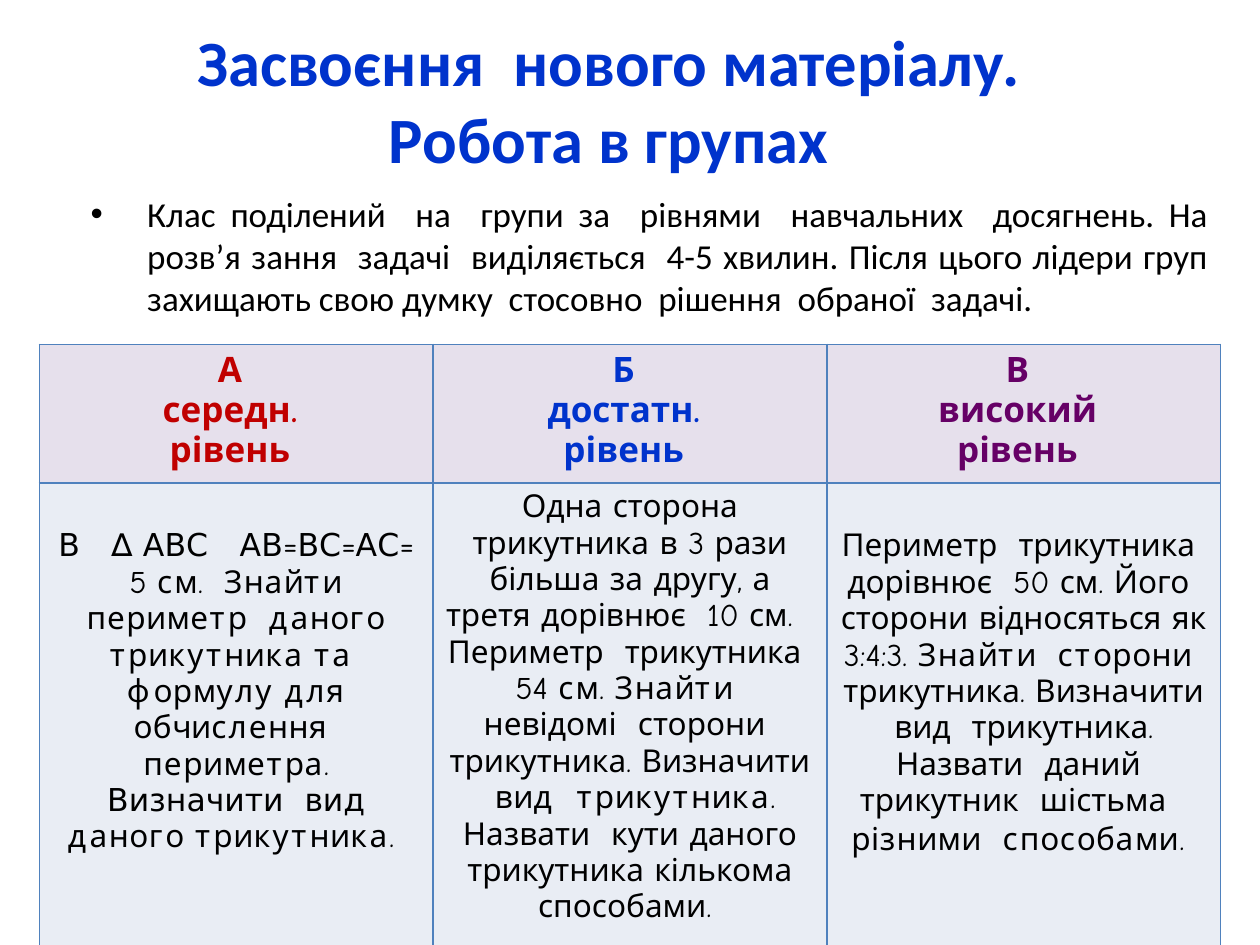
from dataclasses import dataclass

from lxml import etree
from pptx import Presentation
from pptx import util as u
from pptx.dml.color import RGBColor
from pptx.enum import text
from pptx.oxml import ns

BLACK, BLUE, EDGE = "000000", "0033CC", "4F81BD"
MAIN, HAND = "Calibri", "Comic Neue"


@dataclass(frozen=True)
class Run:
    words: str
    size: float = 18
    hue: str = BLACK
    bold: bool = False
    face: str = HAND


@dataclass(frozen=True)
class Group:
    mark: str
    level: str
    hue: str
    task: list[list[Run]]
    top: float


GROUPS = [
    Group("А ", "середн. ", "C00000", [
        [Run("В   ∆ АВС   АВ=ВС=АС= 5 см.  Знайти периметр  даного "
             "трикутника та  формулу для обчислення ")],
        [Run("периметра. Визначити  вид даного трикутника. ")],
    ], 26),
    Group("Б ", "достатн. ", BLUE, [
        [Run("Одна сторона трикутника в 3 рази більша за другу, "
             "а третя дорівнює  10 см.  ")],
        [Run("Периметр  трикутника  54 см. Знайти  невідомі  сторони  "
             "трикутника. Визначити  вид  трикутника. Назвати  кути "
             "даного трикутника кількома способами. ")],
    ], 3.6),
    Group("В ", "високий ", "660066", [
        [Run("Периметр  трикутника  дорівнює  50 см. Його  сторони "
             "відносяться як 3:4:3. Знайти  сторони  трикутника. "
             "Визначити вид  трикутника. Назвати  даний  трикутник  "
             "шістьма  ")],
        [Run("різними  способами."), Run(" ", 20)],
    ], 26),
]


def tint(code: str) -> RGBColor:
    return RGBColor.from_string(code)


def add_run(para, item: Run) -> None:
    run = para.add_run()
    run.text = item.words
    font = run.font
    font.name, font.size, font.bold = item.face, u.Pt(item.size), item.bold
    font.color.rgb = tint(item.hue)


def write(frame, lines: list[list[Run]], align) -> None:
    for i, line in enumerate(lines):
        para = frame.add_paragraph() if i else frame.paragraphs[0]
        para.alignment = align
        for item in line:
            add_run(para, item)


def add_box(slide, left: float, top: float, width: float, height: float):
    box = slide.shapes.add_textbox(*map(u.Pt, (left, top, width, height)))
    box.text_frame.word_wrap = True
    return box.text_frame


def add_title(slide) -> None:
    frame = add_box(slide, 56.16, 11.52, 591.84, 90)
    frame.vertical_anchor = text.MSO_ANCHOR.MIDDLE
    para = frame.paragraphs[0]
    para.alignment = text.PP_ALIGN.CENTER
    add_run(para, Run("Засвоєння  нового матеріалу. ", 36.9, BLUE, True, MAIN))
    para.add_line_break()
    add_run(para, Run("Робота в групах ", 36.9, BLUE, True, MAIN))


def add_intro(slide) -> None:
    frame = add_box(slide, 33.84, 106.56, 663.84, 78.48)
    props = frame.paragraphs[0]._p.get_or_add_pPr()
    props.set("marL", str(u.Pt(43.2)))
    props.set("indent", str(u.Pt(-32.4)))
    etree.SubElement(props, ns.qn("a:buFont")).set("typeface", "Arial")
    etree.SubElement(props, ns.qn("a:buChar")).set("char", "•")
    words = ("Клас поділений  на  групи за  рівнями  навчальних  досягнень. "
             "На розв’я зання  задачі  виділяється  4-5 хвилин. Після цього "
             "лідери груп захищають свою думку  стосовно  рішення  обраної  "
             "задачі.  ")
    write(frame, [[Run(words, 20, face=MAIN)]], text.PP_ALIGN.JUSTIFY)


def fill_cell(cell, lines: list[list[Run]], fill: str, top: float) -> None:
    props = cell._tc.get_or_add_tcPr()
    for side in ("lnL", "lnR", "lnT", "lnB"):
        line = etree.SubElement(props, ns.qn(f"a:{side}"), w=str(u.Pt(1)))
        solid = etree.SubElement(line, ns.qn("a:solidFill"))
        etree.SubElement(solid, ns.qn("a:srgbClr"), val=EDGE)
    cell.fill.solid()
    cell.fill.fore_color.rgb = tint(fill)
    cell.margin_left = cell.margin_right = u.Pt(7.2)
    cell.margin_top, cell.margin_bottom = u.Pt(top), u.Pt(3.6)
    write(cell.text_frame, lines, text.PP_ALIGN.CENTER)


def add_grid(slide) -> None:
    place = map(u.Pt, (22.5, 196.8, 675, 295.2))
    grid = slide.shapes.add_table(2, len(GROUPS), *place).table
    grid.first_row = grid.horz_banding = False
    for row, height in zip(grid.rows, (72, 223.2)):
        row.height = u.Pt(height)
    for i, group in enumerate(GROUPS):
        grid.columns[i].width = u.Pt(675 / len(GROUPS))
        head = [[Run(words, 20, group.hue, True)]
                for words in (group.mark, group.level, "рівень ")]
        fill_cell(grid.cell(0, i), head, "E6E0EC", 3.6)
        fill_cell(grid.cell(1, i), group.task, "E9EDF4", group.top)


def main() -> None:
    deck = Presentation()
    deck.slide_width, deck.slide_height = u.Pt(720), u.Pt(540)
    slide = deck.slides.add_slide(deck.slide_layouts[6])
    add_title(slide)
    add_intro(slide)
    add_grid(slide)
    deck.save("out.pptx")


if __name__ == "__main__":
    main()
